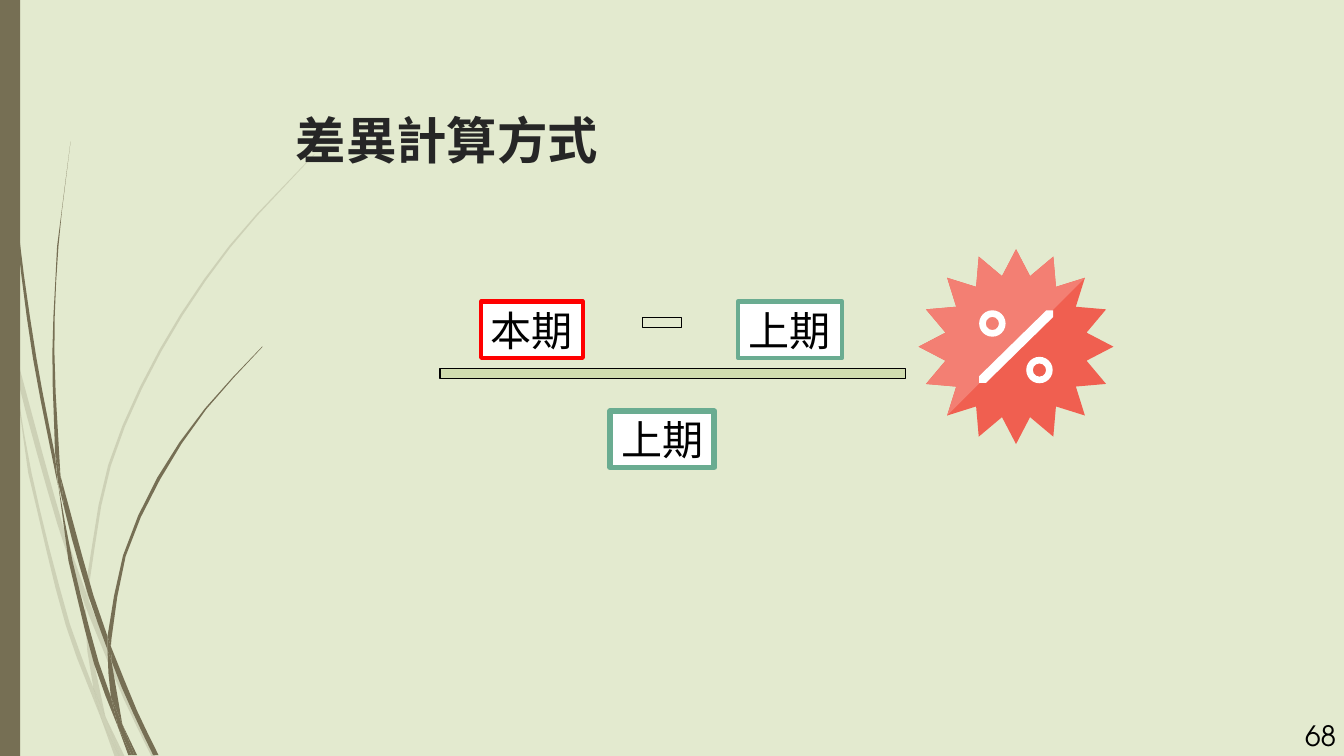
from math import cos, radians, sin

from lxml import etree
from pptx import Presentation
from pptx.dml.color import RGBColor
from pptx.enum import shapes, text
from pptx.oxml.ns import qn
from pptx.util import Cm, Pt

HUES = {"back": "E3EACF", "stem": "766F54", "title": "262626", "ink": "000000",
        "white": "FFFFFF", "red": "FF0000", "teal": "6AAC91", "bar": "D1DDB0",
        "coral": "F05F50", "light": "F37F73"}
CJK, LATIN = "Noto Sans CJK SC", "TeX Gyre Adventor"
UNIT = Cm(2.54) / 1000  # outlines are given in inches, drawn in thousandths

# Each blade of grass has two edges: one out, one back
PALE = [
    ([(.17, 5.25), (0, 4.22)], [(0, 4.49), (.17, 5.25)]),
    ([(.21, 5.18), (.26, 5.64), (.86, 7.82), (1.26, 8.99)],
     [(1.27, 8.79), (.93, 7.8), (.21, 5.18)]),
    ([(1.32, 9.15), (1.84, 10.4), (2.26, 11.27)],
     [(2.32, 11.27), (1.91, 10.37), (1.32, 8.94)]),
    ([(1.57, 10.67), (1.79, 11.27)], [(1.86, 11.27)]),
    ([(1.51, 10.71), (1.39, 10.24), (1.04, 9.29), (.47, 7.04), (.17, 5.25)],
     [(.42, 7.04), (.98, 9.31), (1.51, 10.71)]),
    ([(1.26, 8.99), (1.3, 9.69), (1.39, 10.24), (1.57, 10.67)],
     [(1.36, 9.68), (1.26, 8.99)]),
    ([(1.32, 8.94), (1.32, 8.75), (1.65, 6.93), (2.4, 5.23), (3.43, 3.68), (4.68, 2.3)],
     [(4.68, 2.29), (3.41, 3.66), (2.37, 5.21), (1.61, 6.92), (1.27, 8.75)]),
    ([(1.51, 10.71), (1.71, 11.27)], [(1.78, 11.27)]),
    ([(1.26, 8.99), (1.32, 9.15)], [(1.32, 8.94), (1.27, 8.79)]),
    ([(1.39, 10.24), (1.51, 10.71), (1.78, 11.27)], [(1.79, 11.27), (1.57, 10.67)]),
]
DARK = [
    ([(.04, 0), (.1, 1.65), (.25, 3.49), (.49, 5.33), (.86, 7.22)],
     [(.82, 6.79), (.54, 5.32), (.28, 3.48), (.12, 1.64), (.05, 0)]),
    ([(.9, 7.08), (.96, 7.58), (1.32, 8.88), (1.6, 9.67)],
     [(1.6, 9.47), (1.39, 8.86), (.9, 7.08)]),
    ([(1.65, 9.62), (1.66, 9.84), (1.98, 10.61), (2.28, 11.24)],
     [(2.36, 11.24), (2.04, 10.58), (1.65, 9.62)]),
    ([(1.76, 10.83), (1.65, 10.37), (1.47, 9.86), (1.08, 8.35), (.86, 7.16)],
     [(1.02, 8.35), (1.4, 9.88), (1.76, 10.83)]),
    ([(.9, 7.08), (.81, 5.24), (.87, 3.67), (1.05, 2.11)],
     [(.85, 3.67), (.78, 5.24), (.82, 6.74)]),
    ([(1.82, 10.78), (2, 11.24)], [(2.04, 11.24)]),
    ([(.82, 6.74), (.86, 7.16), (.96, 7.58)], [(.9, 7.08)]),
    ([(1.65, 9.62), (1.66, 9.5), (1.87, 8.28), (2.38, 7.14), (3.07, 6.09), (3.91, 5.16)],
     [(3.9, 5.16), (3.05, 6.08), (2.34, 7.11), (1.83, 8.27), (1.6, 9.47)]),
    ([(1.76, 10.83), (1.91, 11.24)], [(1.96, 11.24)]),
    ([(1.6, 9.67), (1.65, 10.37), (1.82, 10.78)], [(1.66, 9.85)]),
    ([(1.6, 9.47), (1.6, 9.67), (1.66, 9.84)], [(1.65, 9.62)]),
    ([(1.65, 10.37), (1.76, 10.83), (1.96, 11.24)], [(2, 11.24), (1.82, 10.78)]),
]


def color(name):
    return RGBColor.from_string(HUES[name])


def paint(shape, fill, line=None, width=0, alpha=None):
    shape.shadow.inherit = False
    shape.fill.solid()
    shape.fill.fore_color.rgb = color(fill)
    if alpha:
        hue = shape.fill._xPr.find(qn("a:solidFill"))[0]
        etree.SubElement(hue, qn("a:alpha"), val=str(alpha * 1000))
    if line:
        shape.line.color.rgb = color(line)
        shape.line.width = Pt(width)
    else:
        shape.line.fill.background()


def curve(edge):
    """Smooth points along an edge, more of them where the anchors lie far apart."""
    pts = [complex(*p) for p in edge]
    pts = [pts[0]] + pts + [pts[-1]]
    out = [edge[0]]
    for a, b, c, d in zip(pts, pts[1:], pts[2:], pts[3:]):
        size = abs(c - b)
        m = (c - a) * size / (abs(b - a) + size)
        n = (d - b) * size / (abs(d - c) + size)
        steps = 1 + int(size * 1.5)
        for i in range(1, steps + 1):
            t = i / steps
            z = (b * (2 * t**3 - 3 * t**2 + 1) + m * (t**3 - 2 * t**2 + t)
                 + c * (3 * t**2 - 2 * t**3) + n * (t**3 - t**2))
            out.append((z.real, z.imag))
    return out


def outline(group, pts, fill, alpha=None):
    pts = [(x * 1000, y * 1000) for x, y in pts]
    pen = group.shapes.build_freeform(*pts[0], scale=UNIT)
    pen.add_line_segments(pts[1:], close=True)
    paint(pen.convert_to_shape(), fill, alpha=alpha)


def grass(slide, blades, alpha=None):
    group = slide.shapes.add_group_shape()
    for out, back in blades:
        outline(group, curve(out) + curve(back), "stem", alpha)


def preset(where, kind, box, *look):
    shape = where.shapes.add_shape(kind, *map(Cm, box))
    paint(shape, *look)
    return shape


def write(shape, words, size, hue, face, align, pads=(.25, .13), bold=False):
    frame = shape.text_frame
    side, top = map(Cm, pads)
    look = {"word_wrap": True, "auto_size": text.MSO_AUTO_SIZE.NONE,
            "vertical_anchor": text.MSO_ANCHOR.MIDDLE, "margin_left": side,
            "margin_right": side, "margin_top": top, "margin_bottom": top}
    for key, value in look.items():
        setattr(frame, key, value)
    par = frame.paragraphs[0]
    par.alignment = align
    run = par.add_run()
    run.text = words
    for key, value in {"size": Pt(size), "name": face, "bold": bold}.items():
        setattr(run.font, key, value)
    run.font.color.rgb = color(hue)
    run.font._element.find(qn("a:latin")).addnext(
        etree.Element(qn("a:ea"), typeface=CJK))


def badge(slide):
    group = slide.shapes.add_group_shape()
    # Sixteen-point star, with its upper left half lighter
    star = []
    for i in range(32):
        turn, reach = radians(11.25 * i - 135), 1.07 if i % 2 else 1.45
        star.append((15.12 + reach * sin(turn), 5.16 - reach * cos(turn)))
    outline(group, star, "coral")
    outline(group, star[:17], "light")
    # Percent sign
    outline(group, [(14.67, 5.7), (14.57, 5.7), (14.57, 5.6), (15.57, 4.62),
                    (15.67, 4.62), (15.67, 4.72)], "white")
    for left, top in ((37.01, 11.73), (38.79, 13.49)):
        preset(group, shapes.MSO_SHAPE.DONUT, (left, top, 1, 1), "white")


def main():
    deck = Presentation()
    deck.slide_width, deck.slide_height = Cm(50.8), Cm(28.58)
    slide = deck.slides.add_slide(deck.slide_layouts[5])
    slide.background.fill.solid()
    slide.background.fill.fore_color.rgb = color("back")
    rect, minus = shapes.MSO_SHAPE.RECTANGLE, shapes.MSO_SHAPE.MATH_MINUS

    # Side decoration
    grass(slide, PALE, 20)
    grass(slide, DARK)
    preset(slide, rect, (0, 0, .76, 28.58), "stem")

    # Title, in front of the grass
    title = slide.shapes.title
    slide.shapes._spTree.append(title._element)
    place = {"left": 10.8, "top": 2.59, "width": 37.13, "height": 5.33}
    for key, value in place.items():
        setattr(title, key, Cm(value))
    write(title, "差異計算方式", 54, "title", CJK, text.PP_ALIGN.LEFT, (.38, .18), True)

    # Formula
    preset(slide, minus, (24.03, 11.4, 2.01, 1.57), "back", "ink", 1.25)
    preset(slide, minus, (13.46, 13.34, 23.93, 1.57), "bar", "ink", 1.25)
    for words, left, top, width, line, weight in (
            ("本期", 18.19, 11.4, 3.84, "red", 4.5),
            ("上期", 23.06, 15.54, 3.94, "teal", 6),
            ("上期", 27.89, 11.4, 3.94, "teal", 4.5)):
        term = preset(slide, rect, (left, top, width, 2.13), "white", line, weight)
        write(term, words, 44, "ink", LATIN, text.PP_ALIGN.CENTER)

    # Page number and percent badge
    page = slide.shapes.add_textbox(*map(Cm, (47.5, 27.05, 3.25, 1.52)))
    write(page, "68", 30, "ink", LATIN, text.PP_ALIGN.RIGHT)
    badge(slide)

    deck.save("out.pptx")


if __name__ == "__main__":
    main()
